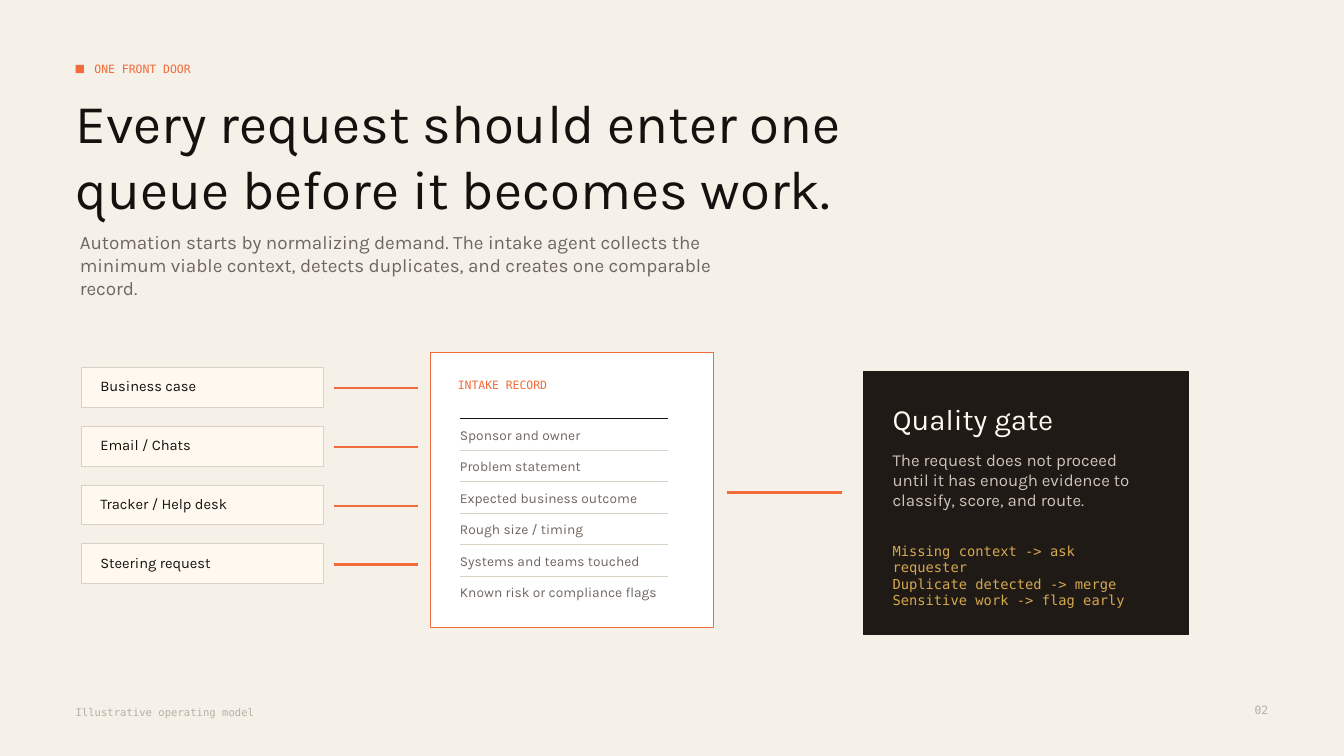
from lxml import etree
from pptx import Presentation
from pptx.dml.color import RGBColor
from pptx.enum.shapes import MSO_CONNECTOR, MSO_SHAPE
from pptx.enum.text import MSO_ANCHOR, MSO_AUTO_SIZE, PP_ALIGN
from pptx.oxml.ns import qn
from pptx.util import Pt

RECT = MSO_SHAPE.RECTANGLE
STRAIGHT = MSO_CONNECTOR.STRAIGHT
TOP, MIDDLE = MSO_ANCHOR.TOP, MSO_ANCHOR.MIDDLE
LEFT, RIGHT = PP_ALIGN.LEFT, PP_ALIGN.RIGHT
NO_FIT = MSO_AUTO_SIZE.NONE

SANS, MONO = "Karla", "DejaVu Sans Mono"
COLORS = {
    "paper": "F5F0E8",
    "cream": "FFF9EF",
    "white": "FFFFFF",
    "orange": "F26B3A",
    "ink": "15110E",
    "dark": "201A16",
    "gray": "6F675F",
    "border": "D9D0C6",
    "sand": "CFC4B8",
    "gold": "D6A84F",
    "muted": "B8AEA4",
}

SOURCES = ["Business case", "Email / Chats", "Tracker / Help desk", "Steering request"]
FIELDS = [
    "Sponsor and owner",
    "Problem statement",
    "Expected business outcome",
    "Rough size / timing",
    "Systems and teams touched",
    "Known risk or compliance flags",
]
CHECKS = [
    "Missing context -> ask requester",
    "Duplicate detected -> merge",
    "Sensitive work -> flag early",
]


def rgb(name):
    return RGBColor.from_string(COLORS[name])


def write(sp, lines, size, color, font=SANS, align=LEFT, anchor=TOP):
    tf = sp.text_frame
    tf.word_wrap = True
    tf.auto_size = NO_FIT
    tf.vertical_anchor = anchor
    tf.margin_left = tf.margin_top = tf.margin_right = tf.margin_bottom = 0
    tf.text = "\n".join(lines)
    for p in tf.paragraphs:
        p.alignment = align
        p.font.size = Pt(size)
        p.font.name = font
        p.font.color.rgb = rgb(color)


def add_text(s, x, y, w, h, lines, size, color, **style):
    sp = s.shapes.add_textbox(Pt(x), Pt(y), Pt(w), Pt(h))
    write(sp, lines, size, color, **style)


def add_box(s, x, y, w, h, fill, line=None):
    sp = s.shapes.add_shape(RECT, Pt(x), Pt(y), Pt(w), Pt(h))
    sp.shadow.inherit = False
    sp.fill.solid()
    sp.fill.fore_color.rgb = rgb(fill)
    if line:
        sp.line.color.rgb = rgb(line)
        sp.line.width = Pt(0.75)
    else:
        sp.line.fill.background()


def add_rule(s, x, y, w, color, weight):
    line = s.shapes.add_connector(STRAIGHT, Pt(x), Pt(y), Pt(x + w), Pt(y))
    line.line.color.rgb = rgb(color)
    line.line.width = Pt(weight)
    etree.SubElement(line._element.spPr, qn("a:effectLst"))


def add_header(s, x, y):
    add_box(s, x, y + 5.8, 6, 6, "orange")
    add_text(s, x + 13.5, y, 315, 18, ["ONE FRONT DOOR"], 8.2, "orange",
             font=MONO, anchor=MIDDLE)
    title = s.shapes.title
    title.left, title.top = Pt(x), Pt(y + 23)
    title.width, title.height = Pt(615), Pt(99)
    write(title, ["Every request should enter one queue before it becomes work."],
          39, "ink")
    add_text(s, x + 3, y + 124.5, 457, 54,
             ["Automation starts by normalizing demand. The intake agent collects "
              "the minimum viable context, detects duplicates, and creates one "
              "comparable record."], 13.5, "gray")


def add_sources(s, x, y, w, pitch):
    for i, source in enumerate(SOURCES):
        top = y + i * pitch
        add_box(s, x, top, w, 28.5, "cream", "border")
        add_text(s, x + 13.5, top + 6.75, 142.5, 13.5, [source], 10.5, "ink")
        add_rule(s, x + w + 7.5, top + 14.7, 60, "orange", 1.5)


def add_record(s, x, y, w, h):
    add_box(s, x, y, w, h, "white", "orange")
    add_text(s, x + 19.5, y + 18, 142.5, 13.5, ["INTAKE RECORD"], 8.2, "orange",
             font=MONO)
    for i, field in enumerate(FIELDS):
        top = y + 47 + i * 22.5
        add_rule(s, x + 21, top, 148.5, "border" if i else "ink", 0.75)
        add_text(s, x + 21, top + 5.6, 154, 13.5, [field], 9.8, "gray")


def add_gate(s, x, y, w, h):
    add_box(s, x, y, w, h, "dark", "dark")
    left = x + 21
    add_text(s, left, y + 21, 165, 28.5, ["Quality gate"], 21, "cream")
    add_text(s, left, y + 55.5, 172.5, 63,
             ["The request does not proceed until it has enough evidence to "
              "classify, score, and route."], 12, "sand")
    add_text(s, left, y + 122, 172.5, 52.5, CHECKS, 9.8, "gold", font=MONO)


def add_footer(s, x, y, w):
    add_text(s, x, y, 240, 13.5, ["Illustrative operating model"], 7.5, "muted",
             font=MONO)
    add_text(s, x + w - 36, y - 1.5, 36, 15, ["02"], 8.2, "muted",
             font=MONO, align=RIGHT)


def main():
    prs = Presentation()
    prs.slide_width, prs.slide_height = Pt(960), Pt(540)
    s = prs.slides.add_slide(prs.slide_layouts[5])
    s.background.fill.solid()
    s.background.fill.fore_color.rgb = rgb("paper")
    add_header(s, 54, 40.5)
    add_sources(s, 58.2, 262.5, 172.8, 42)
    add_record(s, 307.5, 252, 202.5, 196.5)
    add_rule(s, 519, 351.8, 82.5, "orange", 1.5)
    add_gate(s, 616.5, 265.5, 232.5, 187.5)
    add_footer(s, 54, 504, 852)
    prs.save("out.pptx")


if __name__ == "__main__":
    main()
